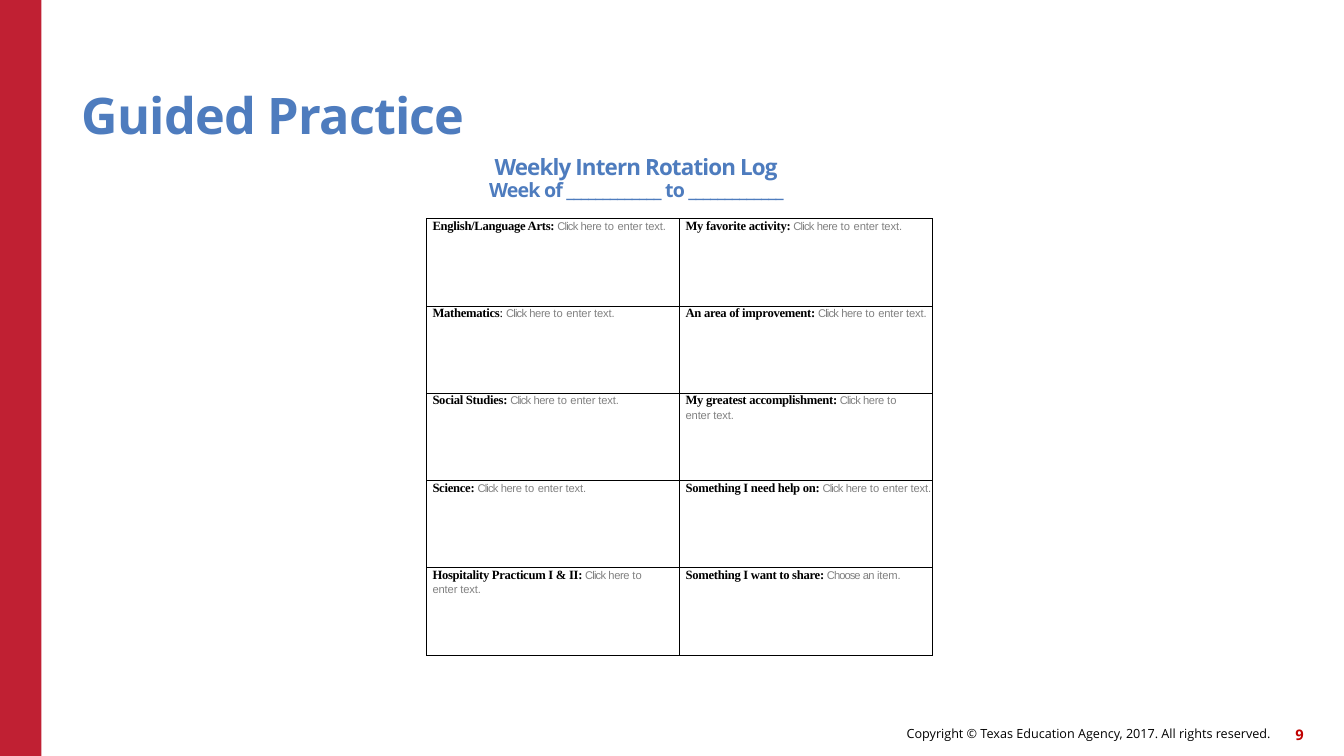
from lxml.etree import SubElement
from pptx import Presentation
from pptx.dml.color import RGBColor
from pptx.enum.shapes import MSO_SHAPE
from pptx.enum.text import MSO_ANCHOR, MSO_AUTO_SIZE, PP_ALIGN
from pptx.oxml import parse_xml
from pptx.oxml.ns import nsdecls, qn
from pptx.util import Inches, Pt

BLUE, RED, DARK_RED = "4E7CBE", "C02033", "C00000"
BLACK, GRAY = "000000", "818181"

# Prompt words with their letter spacing in points
ENTER_TEXT = [("Click ", -0.6), ("here ", -0.3), ("to ", 0.1), ("enter text.", -0.1)]
CHOOSE_ITEM = [("Choose ", -0.7), ("an ", -0.5), ("item.", -0.1)]

# Left and right label of each log row
LOG_ROWS = [
    ("English/Language Arts:", "My favorite activity:"),
    ("Mathematics:", "An area of improvement:"),
    ("Social Studies:", "My greatest accomplishment:"),
    ("Science:", "Something I need help on:"),
    ("Hospitality Practicum I & II:", "Something I want to share:"),
]
# Cells whose prompt breaks before "enter"
NARROW_LABELS = ("My greatest accomplishment:", "Hospitality Practicum I & II:")


def color(hex_text):
    return RGBColor.from_string(hex_text)


def style_font(font, name, size, hex_text, bold=False):
    font.name = name
    font.size = Pt(size)
    font.bold = bold
    font.color.rgb = color(hex_text)


def add_span(para, text, spacing=0):
    span = para.add_run()
    span.text = text
    if spacing:
        span._r.get_or_add_rPr().set("spc", str(round(spacing * 100)))
    return span


def place(shape, left, top, width, height):
    shape.left, shape.top = Inches(left), Inches(top)
    shape.width, shape.height = Inches(width), Inches(height)


def prepare_frame(shape, anchor):
    frame = shape.text_frame
    frame.word_wrap = True
    frame.auto_size = MSO_AUTO_SIZE.NONE
    frame.vertical_anchor = anchor
    frame.margin_left = frame.margin_right = 0
    frame.margin_top = frame.margin_bottom = 0
    return frame


def write_heading(para, text, size, align):
    properties = para._p.get_or_add_pPr()
    properties.set("marL", "0")
    properties.set("indent", "0")
    SubElement(properties, qn("a:buNone"))
    para.alignment = align
    para.line_spacing = 0.9
    para.space_before = Pt(0)
    style_font(para.font, "Open Sans", size, BLUE, True)
    add_span(para, text, -0.6)


def add_side_bar(page):
    bar = page.shapes.add_shape(MSO_SHAPE.RECTANGLE, 0, 0, Inches(0.41), Inches(7.5))
    bar.shadow.inherit = False
    bar.fill.solid()
    bar.fill.fore_color.rgb = color(RED)
    bar.line.fill.background()


def add_footer(page, text, bounds, size, hex_text, bold=False):
    box = page.shapes.add_textbox(*[Inches(length) for length in bounds])
    para = prepare_frame(box, MSO_ANCHOR.MIDDLE).paragraphs[0]
    para.alignment = PP_ALIGN.RIGHT
    style_font(para.font, "Open Sans", size, hex_text, bold)
    add_span(para, text)


def add_borders(cell):
    properties = cell._tc.get_or_add_tcPr()
    for index, side in enumerate(("lnL", "lnR", "lnT", "lnB")):
        border = parse_xml(
            f'<a:{side} {nsdecls("a")} w="{Pt(0.5)}"><a:solidFill>'
            f'<a:srgbClr val="{BLACK}"/></a:solidFill></a:{side}>'
        )
        properties.insert(index, border)


def fill_cell(cell, label):
    cell.margin_left = cell.margin_top = cell.margin_bottom = 0
    cell.margin_right = Inches(0.15) if label in NARROW_LABELS else 0
    cell.fill.background()
    add_borders(cell)
    para = cell.text_frame.paragraphs[0]
    para._p.get_or_add_pPr().set("marL", str(Inches(0.06)))
    para.line_spacing = Pt(10.2)

    # Label, with a light colon after Mathematics
    if label == "Mathematics:":
        pieces = [("Mathematics", True), (": ", False)]
    else:
        pieces = [(label + " ", True)]
    for text, bold in pieces:
        span = add_span(para, text, -0.2)
        style_font(span.font, "Times New Roman", 9, BLACK, bold)

    # Prompt
    prompt = CHOOSE_ITEM if label == "Something I want to share:" else ENTER_TEXT
    for text, spacing in prompt:
        style_font(add_span(para, text, spacing).font, "Arial", 8, GRAY)


def add_log_table(page):
    frame = page.shapes.add_table(
        len(LOG_ROWS), 2, Inches(4.23), Inches(2.17), Inches(5.02), Inches(4.33)
    )
    table = frame.table
    table.first_row = table.horz_banding = False
    for row_index, labels in enumerate(LOG_ROWS):
        for column_index, label in enumerate(labels):
            fill_cell(table.cell(row_index, column_index), label)


def main():
    deck = Presentation()
    deck.slide_width, deck.slide_height = Inches(13.33), Inches(7.5)
    page = deck.slides.add_slide(deck.slide_layouts[1])

    # Side bar and footer
    add_side_bar(page)
    add_footer(page, "Copyright © Texas Education Agency, 2017. All rights reserved.",
               (6.14, 7.12, 6.46, 0.32), 9, BLACK)
    add_footer(page, "9", (12.51, 7.13, 0.42, 0.32), 10.5, DARK_RED, True)

    # Title
    title = page.shapes.title
    place(title, 0.81, 0.48, 11, 0.96)
    title_frame = prepare_frame(title, MSO_ANCHOR.BOTTOM)
    write_heading(title_frame.paragraphs[0], "Guided Practice", 36, PP_ALIGN.LEFT)

    # Log heading
    body = page.placeholders[1]
    place(body, 0.81, 1.55, 11, 5.18)
    body_frame = prepare_frame(body, MSO_ANCHOR.TOP)
    write_heading(body_frame.paragraphs[0], "Weekly Intern Rotation Log", 16, PP_ALIGN.CENTER)
    write_heading(body_frame.add_paragraph(), "Week of _____________ to _____________",
                  14, PP_ALIGN.CENTER)

    # Log table
    add_log_table(page)
    deck.save("out.pptx")


if __name__ == "__main__":
    main()
